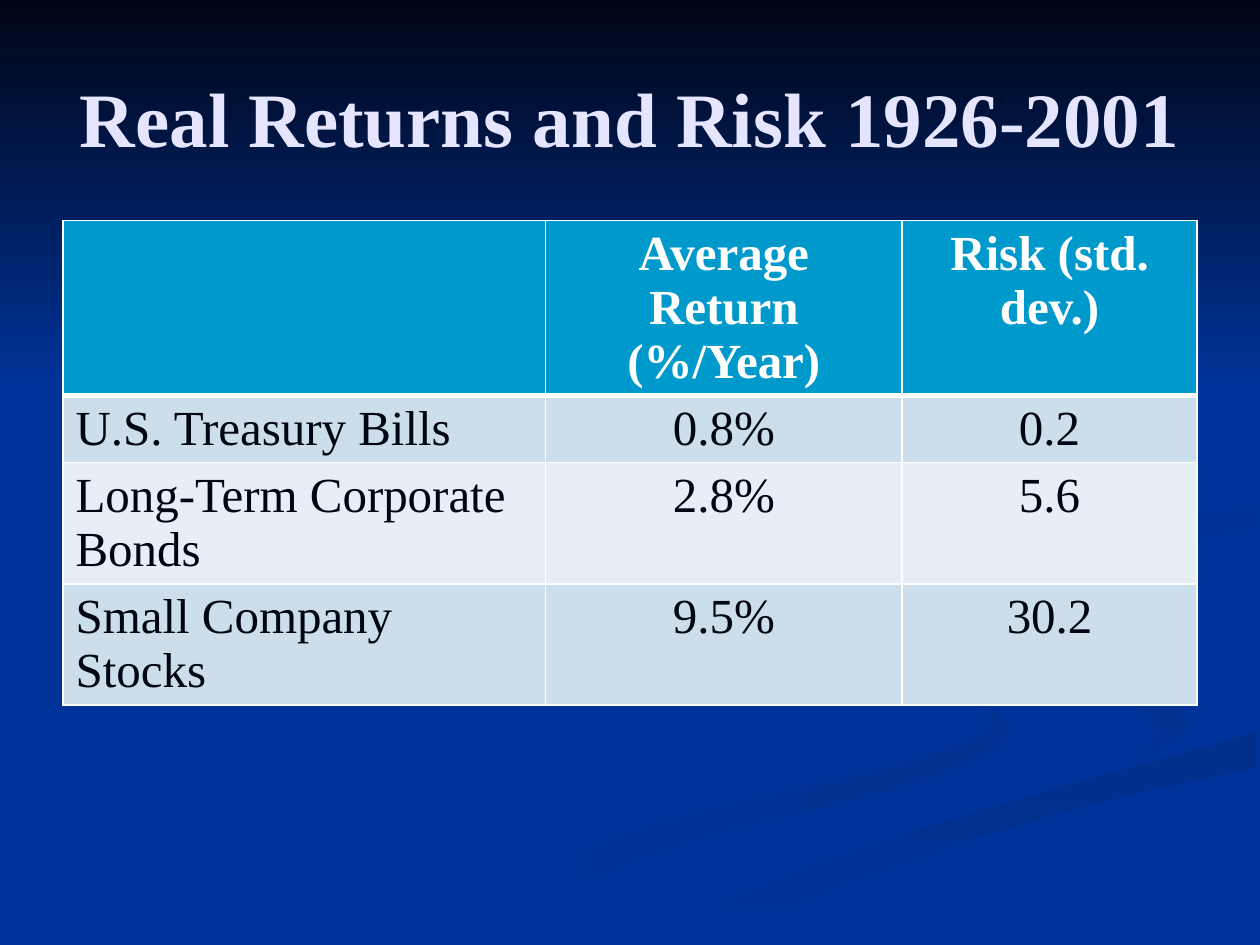
from lxml import etree
from pptx import Presentation
from pptx.dml.color import RGBColor
from pptx.enum.shapes import MSO_SHAPE
from pptx.enum.text import MSO_ANCHOR, PP_ALIGN
from pptx.oxml.ns import qn
from pptx.util import Inches, Pt

RECTANGLE = MSO_SHAPE.RECTANGLE
MIDDLE = MSO_ANCHOR.MIDDLE
LEFT, CENTER = PP_ALIGN.LEFT, PP_ALIGN.CENTER

FONT = "Times New Roman"
BLUE, NAVY, WHITE, LAVENDER = "003399", "000514", "FFFFFF", "E5E5FF"
HEADER_FILL, BAND_FILLS = "0099CC", ("CCDEEC", "E7EFF6")

# Ribbons: first colour, last colour, clockwise angle, two edges in 1/100 inch
RIBBONS = [
    (BLUE, "003193", 0,
     [(575, 459), (594, 491), (728, 535), (785, 570), (727, 602), (499, 661), (300, 749)],
     [(361, 749), (532, 674), (740, 618), (800, 581), (745, 538), (602, 490), (575, 459)]),
    (BLUE, "003193", 45,
     [(724, 464), (766, 512), (880, 549), (918, 581), (894, 605)],
     [(932, 589), (943, 570), (905, 540), (758, 498), (724, 464)]),
    ("002F8C", BLUE, 90,
     [(503, 749), (630, 693), (797, 638), (998, 581)],
     [(998, 609), (821, 651), (649, 710), (571, 749)]),
    ("003091", BLUE, 45,
     [(826, 496), (805, 472), (859, 443), (998, 420)],
     [(998, 402), (849, 427), (781, 460), (826, 496)]),
]

HEADER = ["", "Average Return (%/Year)", "Risk (std. dev.)"]
ROWS = [
    ["U.S. Treasury Bills", "0.8%", "0.2"],
    ["Long-Term Corporate Bonds", "2.8%", "5.6"],
    ["Small Company Stocks", "9.5%", "30.2"],
]
COL_WIDTHS = [3.83, 2.83, 2.34]
ROW_HEIGHTS = [1.38, 0.53, 0.96, 0.96]


def rgb(color):
    return RGBColor.from_string(color)


def style_text(tf, size, color, bold, align):
    for p in tf.paragraphs:
        p.alignment = align
        for r in p.runs:
            r.font.name, r.font.size, r.font.bold = FONT, Pt(size), bold
            r.font.color.rgb = rgb(color)


def fill_gradient(sp, first, last, angle):
    sp.shadow.inherit = False
    sp.line.fill.background()
    sp.fill.gradient()
    sp.fill.gradient_angle = -angle % 360
    for stop, color, position in zip(sp.fill.gradient_stops, (first, last), (0, 1)):
        stop.color.rgb = rgb(color)
        stop.position = position


def smooth_edge(points, steps=6):
    """Catmull-Rom curve through the points."""
    padded = [points[0], *points, points[-1]]
    curve = []
    for a, b, c, d in zip(padded, padded[1:], padded[2:], padded[3:]):
        for t in (k / steps for k in range(steps)):
            curve.append(tuple(
                q + t * (r - p + t * (2 * p - 5 * q + 4 * r - s + t * (3 * q - p - 3 * r + s))) / 2
                for p, q, r, s in zip(a, b, c, d)))
    return curve + [points[-1]]


def add_backdrop(s, width, height):
    s.background.fill.solid()
    s.background.fill.fore_color.rgb = rgb(BLUE)
    # Swirling ribbons
    for first, last, angle, edge, return_edge in RIBBONS:
        points = smooth_edge(edge) + smooth_edge(return_edge)
        builder = s.shapes.build_freeform(*points[0], scale=Inches(0.01))
        builder.add_line_segments(points[1:], close=True)
        fill_gradient(builder.convert_to_shape(), first, last, angle)
    # Dark fade across the top
    fade = s.shapes.add_shape(RECTANGLE, 0, 0, width, height)
    fill_gradient(fade, NAVY, BLUE, 90)
    fade.element.addnext(s.shapes.title.element)


def add_title(s, left, top, width, height):
    title = s.shapes.title
    title.left, title.top, title.width, title.height = left, top, width, height
    tf = title.text_frame
    tf.text = "Real Returns and Risk 1926-2001"
    tf.vertical_anchor = MIDDLE
    style_text(tf, 44, LAVENDER, True, CENTER)


def set_borders(cell, widths):
    tcPr = cell._tc.get_or_add_tcPr()
    for side, width in zip("LRTB", widths):
        ln = etree.SubElement(tcPr, qn(f"a:ln{side}"), w=str(Pt(width)))
        fill = etree.SubElement(ln, qn("a:solidFill"))
        etree.SubElement(fill, qn("a:srgbClr"), val=WHITE)


def add_returns_table(s, left, top, width, height):
    rows = [HEADER] + ROWS
    table = s.shapes.add_table(len(rows), len(HEADER), left, top, width, height).table
    for col, col_width in zip(table.columns, COL_WIDTHS):
        col.width = Inches(col_width)
    for row, row_height in zip(table.rows, ROW_HEIGHTS):
        row.height = Inches(row_height)
    for i, values in enumerate(rows):
        header = i == 0
        for j, value in enumerate(values):
            cell = table.cell(i, j)
            cell.text = value
            style_text(cell.text_frame, 28, WHITE if header else NAVY, header,
                       CENTER if header or j else LEFT)
            set_borders(cell, (1, 1, 3 if i == 1 else 1, 3 if header else 1))
            cell.fill.solid()
            cell.fill.fore_color.rgb = rgb(HEADER_FILL if header else BAND_FILLS[(i - 1) % 2])


def main():
    prs = Presentation()
    prs.slide_width, prs.slide_height = Inches(10), Inches(7.5)
    s = prs.slides.add_slide(prs.slide_layouts[5])
    add_backdrop(s, prs.slide_width, Inches(3.08))
    add_title(s, Inches(0.5), Inches(0.3), Inches(9), Inches(1.25))
    add_returns_table(s, Inches(0.5), Inches(1.75), Inches(9), Inches(sum(ROW_HEIGHTS)))
    prs.save("out.pptx")


if __name__ == "__main__":
    main()
